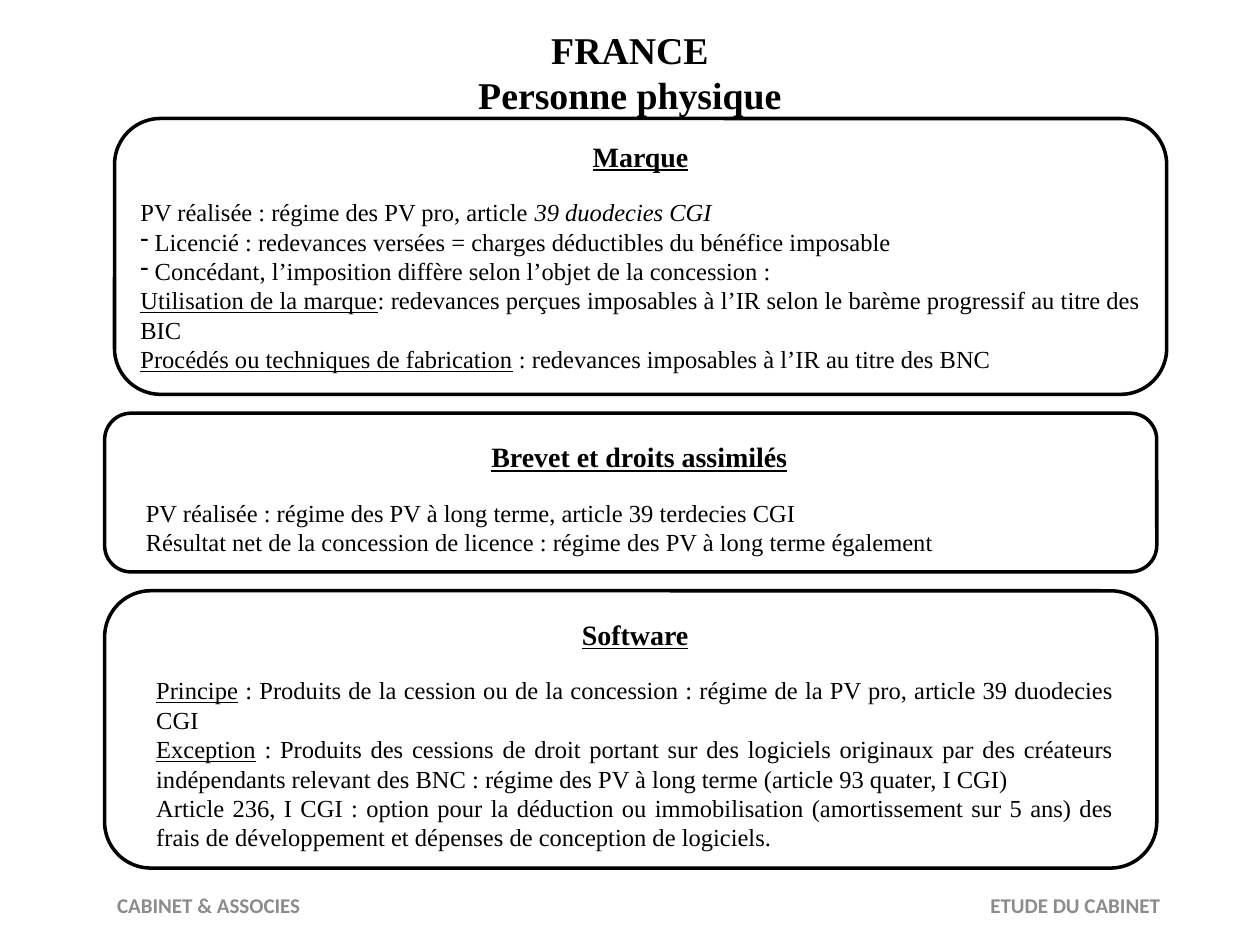
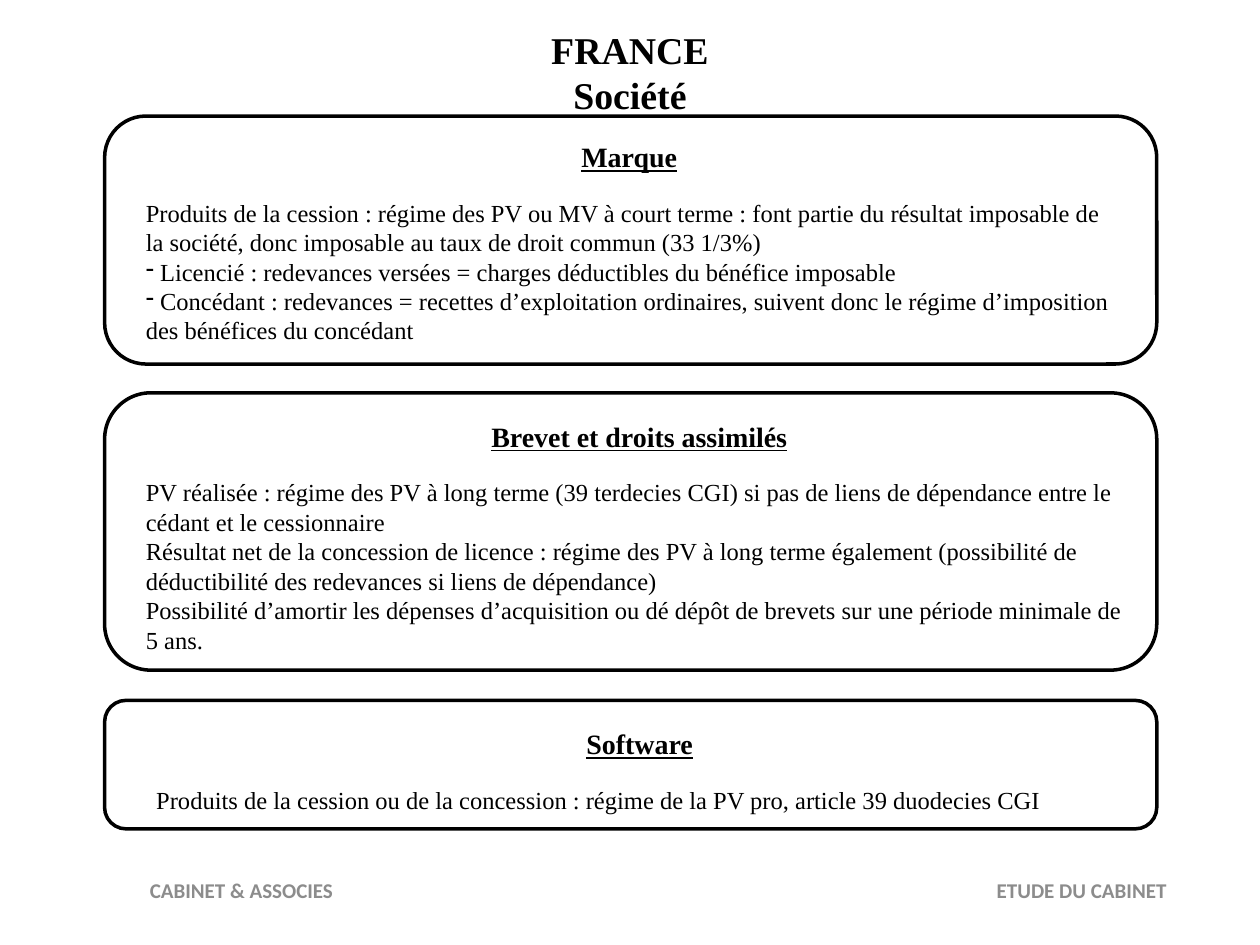
from dataclasses import dataclass
from typing import NamedTuple

from lxml.etree import SubElement
from pptx import Presentation
from pptx.dml.color import RGBColor
from pptx.enum.shapes import MSO_SHAPE
from pptx.enum.text import MSO_ANCHOR, PP_ALIGN
from pptx.oxml.ns import qn
from pptx.util import Cm, Pt

BLACK = RGBColor(0x00, 0x00, 0x00)
WHITE = RGBColor(0xFF, 0xFF, 0xFF)
GREY = RGBColor(0x8C, 0x8C, 0x8C)
BODY_FONT = "Times New Roman"
FOOTER_FONT = "Calibri"
CARD_LEFT = 2.11
CARD_WIDTH = 21.21
FOOTER_LEFT = 2.11


class Span(NamedTuple):
    text: str
    underline: bool = False
    italic: bool = False


class Line(NamedTuple):
    spans: list[Span]
    dashed: bool = False


class TextArea(NamedTuple):
    left: float
    width: float
    height: float
    offset: float = 0.41


@dataclass
class Card:
    heading: str
    top: float
    height: float
    lines: list[Line]
    text_area: TextArea | None = None
    left: float = CARD_LEFT


@dataclass
class Footer:
    top: float
    width: float
    height: float
    inset: float
    tab: float


@dataclass
class Page:
    subtitle: str
    alignment: PP_ALIGN
    cards: list[Card]
    footer: Footer


def plain(text: str) -> Line:
    return Line([Span(text)])


def dash(text: str) -> Line:
    return Line([Span(f" {text}")], dashed=True)


def labelled(label: str, text: str) -> Line:
    return Line([Span(label, underline=True), Span(text)])


PAGES = [
    Page(
        "Personne physique",
        PP_ALIGN.JUSTIFY,
        [
            Card("Marque", 2.39, 5.56, [
                Line([Span("PV réalisée : régime des PV pro, article "),
                      Span("39 duodecies CGI", italic=True)]),
                dash("Licencié : redevances versées = charges déductibles du bénéfice imposable"),
                dash("Concédant, l’imposition diffère selon l’objet de la concession : "),
                labelled("Utilisation de la marque",
                         ": redevances perçues imposables à l’IR selon le barème "
                         "progressif au titre des BIC"),
                labelled("Procédés ou techniques de fabrication",
                         " : redevances imposables à l’IR au titre des BNC"),
            ], left=2.31),
            Card("Brevet et droits assimilés", 8.33, 3.2, [
                plain("PV réalisée : régime des PV à long terme, article 39 terdecies CGI"),
                plain("Résultat net de la concession de licence : régime des PV à long "
                      "terme également"),
            ], TextArea(2.69, 20.4, 3.43)),
            Card("Software", 11.91, 5.59, [
                labelled("Principe",
                         " : Produits de la cession ou de la concession : régime de la "
                         "PV pro, article 39 duodecies CGI"),
                labelled("Exception",
                         " : Produits des cessions de droit portant sur des logiciels "
                         "originaux par des créateurs indépendants relevant des BNC : "
                         "régime des PV à long terme (article 93 quater, I CGI)"),
                plain("Article 236, I CGI : option pour la déduction ou immobilisation "
                      "(amortissement sur 5 ans) des frais de développement et dépenses "
                      "de conception de logiciels."),
            ], TextArea(2.9, 19.81, 5.64)),
        ],
        Footer(17.73, 21.79, 1.02, 0.25, 21.03),
    ),
    Page(
        "Société",
        PP_ALIGN.LEFT,
        [
            Card("Marque", 2.34, 5.0, [
                plain("Produits de la cession : régime des PV ou MV à court terme : font "
                      "partie du résultat imposable de la société, donc imposable au taux "
                      "de droit commun (33 1/3%)"),
                dash("Licencié : redevances versées = charges déductibles du bénéfice imposable"),
                dash("Concédant : redevances = recettes d’exploitation ordinaires, suivent "
                     "donc le régime d’imposition des bénéfices du concédant"),
            ], TextArea(2.69, 19.99, 4.45, 0.35)),
            Card("Brevet et droits assimilés", 7.92, 5.59, [
                plain("PV réalisée : régime des PV à long terme (39 terdecies CGI) si pas "
                      "de liens de dépendance entre le cédant et le cessionnaire"),
                plain("Résultat net de la concession de licence : régime des PV à long "
                      "terme également (possibilité de déductibilité des redevances si "
                      "liens de dépendance)"),
                plain("Possibilité d’amortir les dépenses d’acquisition ou dé dépôt de "
                      "brevets sur une période minimale de 5 ans."),
            ], TextArea(2.69, 20.4, 7.01)),
            Card("Software", 14.12, 2.59, [
                plain("Produits de la cession ou de la concession : régime de la PV pro, "
                      "article 39 duodecies CGI"),
            ], TextArea(2.9, 19.99, 2.82)),
        ],
        Footer(17.35, 22.4, 1.19, 0.91, 20.5),
    ),
]


def style_font(font, size: float, bold: bool = False,
               name: str = BODY_FONT, color: RGBColor = BLACK) -> None:
    font.name = name
    font.size = Pt(size)
    font.bold = bold
    font.color.rgb = color


def add_text_box(slide, left: float, top: float, width: float, height: float,
                 anchor: MSO_ANCHOR = MSO_ANCHOR.TOP):
    shape = slide.shapes.add_textbox(Cm(left), Cm(top), Cm(width), Cm(height))
    shape.text_frame.word_wrap = True
    shape.text_frame.vertical_anchor = anchor
    return shape.text_frame


def add_title(slide, subtitle: str) -> None:
    text_frame = add_text_box(slide, 1.27, 0.76, 22.86, 1.37, MSO_ANCHOR.MIDDLE)
    paragraph = text_frame.paragraphs[0]
    paragraph.text = f"FRANCE\n{subtitle}"
    paragraph.alignment = PP_ALIGN.CENTER
    for run in paragraph.runs:
        style_font(run.font, 21.6, bold=True)


def add_dash(paragraph) -> None:
    properties = paragraph._p.get_or_add_pPr()
    properties.set("marL", "0")
    properties.set("indent", "0")
    SubElement(properties, qn("a:buFontTx"))
    SubElement(properties, qn("a:buChar"), char="-")


def write_card_text(text_frame, card: Card, alignment: PP_ALIGN) -> None:
    heading = text_frame.paragraphs[0]
    heading.text = card.heading
    heading.alignment = PP_ALIGN.CENTER
    heading.space_after = Pt(14)
    style_font(heading.runs[0].font, 16, bold=True)
    heading.runs[0].font.underline = True
    for line in card.lines:
        paragraph = text_frame.add_paragraph()
        paragraph.alignment = alignment
        if line.dashed:
            add_dash(paragraph)
        for span in line.spans:
            run = paragraph.add_run()
            run.text = span.text
            style_font(run.font, 14)
            run.font.underline = span.underline
            run.font.italic = span.italic


def add_card(slide, card: Card, alignment: PP_ALIGN) -> None:
    frame = slide.shapes.add_shape(
        MSO_SHAPE.ROUNDED_RECTANGLE,
        Cm(card.left), Cm(card.top), Cm(CARD_WIDTH), Cm(card.height))
    frame.shadow.inherit = False
    frame.fill.solid()
    frame.fill.fore_color.rgb = WHITE
    frame.line.color.rgb = BLACK
    frame.line.width = Pt(2)
    text_frame = frame.text_frame
    text_frame.word_wrap = True
    text_frame.vertical_anchor = MSO_ANCHOR.MIDDLE
    area = card.text_area
    if area:
        text_frame = add_text_box(slide, area.left, card.top + area.offset,
                                  area.width, area.height)
    write_card_text(text_frame, card, alignment)


def add_footer(slide, footer: Footer) -> None:
    text_frame = add_text_box(slide, FOOTER_LEFT, footer.top, footer.width,
                              footer.height, MSO_ANCHOR.MIDDLE)
    text_frame.margin_left = Cm(footer.inset)
    paragraph = text_frame.paragraphs[0]
    paragraph.text = "CABINET & ASSOCIES\tETUDE DU CABINET"
    paragraph.alignment = PP_ALIGN.LEFT
    tabs = SubElement(paragraph._p.get_or_add_pPr(), qn("a:tabLst"))
    SubElement(tabs, qn("a:tab"), pos=str(Cm(footer.tab)), algn="r")
    for run in paragraph.runs:
        style_font(run.font, 12, bold=True, name=FOOTER_FONT, color=GREY)


def main() -> None:
    presentation = Presentation()
    presentation.slide_width = Cm(25.4)
    presentation.slide_height = Cm(19.05)
    for page in PAGES:
        slide = presentation.slides.add_slide(presentation.slide_layouts[6])
        add_title(slide, page.subtitle)
        for card in page.cards:
            add_card(slide, card, page.alignment)
        add_footer(slide, page.footer)
    presentation.save("out.pptx")


if __name__ == "__main__":
    main()
